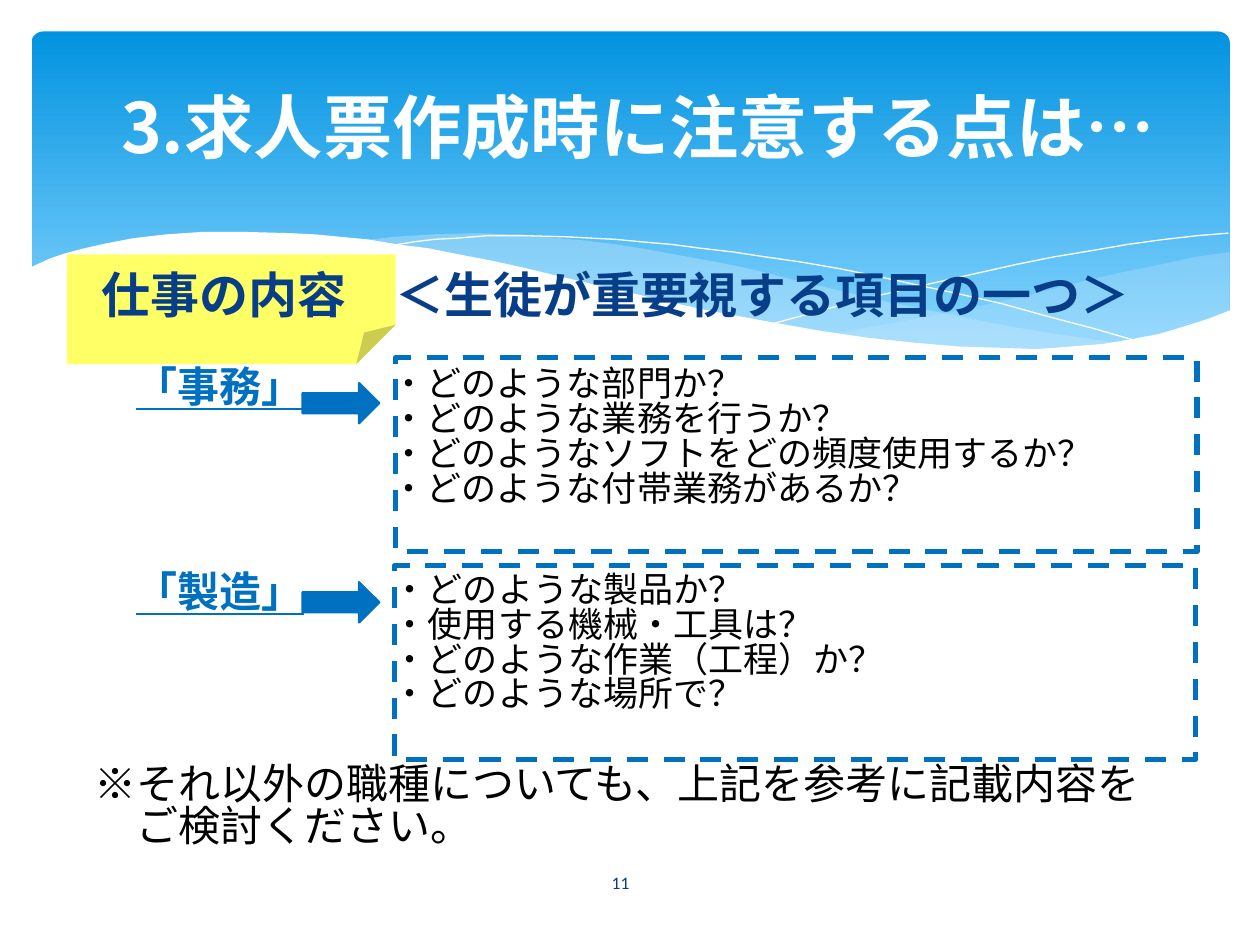
from dataclasses import dataclass

from lxml import etree
from pptx import Presentation
from pptx.dml.color import RGBColor
from pptx.enum.dml import MSO_LINE
from pptx.enum.shapes import MSO_SHAPE
from pptx.enum.text import MSO_ANCHOR, PP_ALIGN
from pptx.oxml.ns import qn
from pptx.util import Inches, Pt


@dataclass(frozen=True)
class Theme:
    japanese: str = "Noto Sans CJK JP"
    latin: str = "Calibri"
    white: str = "FFFFFF"
    black: str = "000000"
    navy: str = "073E87"
    blue: str = "0070C0"
    yellow: str = "FFFF66"
    wave: str = "C6E7FC"
    banner_top: str = "0293E0"
    banner_bottom: str = "83D3FE"
    title: float = 39.6
    heading: float = 28
    label: float = 24
    body: float = 20
    number: float = 10
    line_spacing: float = 0.83


RIGHT_WAVE = [
    (9.76, 2), (9.48, 2.04), (9.21, 2.1), (8.91, 2.16), (8.61, 2.23), (8.05, 2.37),
    (7.53, 2.48), (7.06, 2.57), (6.61, 2.65), (6.91, 2.69), (7.19, 2.72), (7.45, 2.75),
    (7.69, 2.77), (8.03, 2.78), (8.35, 2.77), (8.63, 2.75), (8.89, 2.72), (9.13, 2.67),
    (9.35, 2.62), (9.49, 2.57), (9.63, 2.52), (9.76, 2.47)]
MIDDLE_WAVE = [
    (8.93, 2.73), (8.66, 2.69), (8.37, 2.65), (8.07, 2.6), (7.75, 2.54), (7.41, 2.47),
    (7.06, 2.4), (6.68, 2.31), (6.29, 2.22), (5.98, 2.14), (5.69, 2.08), (5.41, 2.03),
    (5.14, 1.98), (4.89, 1.94), (4.65, 1.91), (4.42, 1.89), (4.2, 1.87), (3.8, 1.85),
    (3.44, 1.86), (3.13, 1.88), (2.86, 1.91), (3.23, 1.96), (3.62, 2.03), (4.04, 2.11),
    (4.49, 2.22), (4.91, 2.32), (5.3, 2.4), (5.66, 2.48), (6.01, 2.55), (6.34, 2.61),
    (6.65, 2.66), (6.95, 2.7), (7.22, 2.74), (7.48, 2.76), (7.73, 2.77), (8.07, 2.78),
    (8.38, 2.78), (8.67, 2.76)]
LONG_CURVE = [
    (3.09, 1.95), (3.28, 1.92), (3.44, 1.9), (3.63, 1.89), (3.87, 1.87), (4.16, 1.87),
    (4.5, 1.88), (4.89, 1.9), (5.1, 1.92), (5.33, 1.94), (5.56, 1.97), (5.82, 2),
    (6.08, 2.04), (6.36, 2.08), (6.65, 2.13), (6.95, 2.19), (7.27, 2.26), (7.6, 2.33),
    (7.95, 2.41), (8.31, 2.51), (8.69, 2.61), (9.07, 2.72)]
SHORT_CURVE = [
    (6.13, 2.57), (6.53, 2.46), (6.95, 2.35), (7.48, 2.23), (8.06, 2.1), (8.36, 2.04),
    (8.66, 1.99), (8.95, 1.94), (9.24, 1.9), (9.51, 1.87), (9.75, 1.85)]
WHITE_WAVE = [
    (9.77, 2.46), (9.59, 2.53), (9.4, 2.59), (9.2, 2.65), (8.99, 2.69), (8.75, 2.73),
    (8.5, 2.75), (8.23, 2.77), (7.93, 2.76), (7.61, 2.75), (7.26, 2.72), (6.88, 2.68),
    (6.48, 2.62), (6.03, 2.54), (5.55, 2.45), (5.03, 2.33), (4.47, 2.2), (4.18, 2.13),
    (3.91, 2.07), (3.65, 2.02), (3.4, 1.97), (3.16, 1.94), (2.92, 1.9), (2.71, 1.88),
    (2.5, 1.86), (2.3, 1.85), (1.93, 1.84), (1.61, 1.84), (1.32, 1.86), (1.06, 1.89),
    (0.85, 1.93), (0.67, 1.97), (0.52, 2.01), (0.4, 2.05), (0.29, 2.1), (0.23, 2.13),
    (0.23, 3.29), (9.77, 3.29)]


class SlideBuilder:
    def __init__(self, slide, theme):
        self.slide = slide
        self.theme = theme

    def paint(self, shape, fill=None, line=None, width=0.0, opacity=100):
        shape.shadow.inherit = False
        if fill:
            shape.fill.solid()
            shape.fill.fore_color.rgb = RGBColor.from_string(fill)
            if opacity < 100:
                color = next(shape.element.iter(qn("a:srgbClr")))
                etree.SubElement(color, qn("a:alpha"), val=str(opacity * 1000))
        else:
            shape.fill.background()
        if line:
            shape.line.color.rgb = RGBColor.from_string(line)
            shape.line.width = Pt(width)
        else:
            shape.line.fill.background()

    def preset(self, kind, box, adjustment=None, **style):
        shape = self.slide.shapes.add_shape(kind, *map(Inches, box))
        if adjustment is not None:
            guides = next(shape.element.iter(qn("a:avLst")))
            for guide in list(guides):
                guides.remove(guide)
            etree.SubElement(guides, qn("a:gd"), name="adj",
                             fmla=f"val {round(adjustment * 100000)}")
        self.paint(shape, **style)
        return shape

    def outline(self, points, closed=True, **style):
        points = [(Inches(x), Inches(y)) for x, y in points]
        builder = self.slide.shapes.build_freeform(*points[0])
        builder.add_line_segments(points[1:], close=closed)
        self.paint(builder.convert_to_shape(), **style)

    def banner(self, box):
        shape = self.preset(MSO_SHAPE.ROUNDED_RECTANGLE, box, 0.034)
        shape.fill.gradient()
        shape.fill.gradient_angle = 270
        stops = ((0, self.theme.banner_top), (0.9, self.theme.banner_bottom))
        for stop, (position, color) in zip(shape.fill.gradient_stops, stops):
            stop.position = position
            stop.color.rgb = RGBColor.from_string(color)

    def text(self, box, lines, size, color, bold=False, underline=False,
             centered=False, font=None):
        frame = self.slide.shapes.add_textbox(*map(Inches, box)).text_frame
        frame.word_wrap = True
        frame.vertical_anchor = MSO_ANCHOR.MIDDLE if centered else MSO_ANCHOR.TOP
        frame.text = "\n".join(lines)
        name = font or self.theme.japanese
        for paragraph in frame.paragraphs:
            paragraph.alignment = PP_ALIGN.CENTER if centered else PP_ALIGN.LEFT
            paragraph.line_spacing = self.theme.line_spacing
            paragraph.font.size = Pt(size)
            paragraph.font.bold = bold
            paragraph.font.underline = underline
            paragraph.font.color.rgb = RGBColor.from_string(color)
            paragraph.font.name = name
            latin = next(paragraph._p.iter(qn("a:latin")))
            latin.addnext(latin.makeelement(qn("a:ea"), {"typeface": name}))

    def job(self, label, questions, text_box, frame_box, arrow_top):
        """Draw a job label, its arrow and its framed list of questions."""
        theme = self.theme
        self.text(text_box, questions, theme.body, theme.black)
        self.text((0.98, text_box[1], 8.7, 0.5), [label], theme.label, theme.blue,
                  bold=True, underline=True)
        self.preset(MSO_SHAPE.RIGHT_ARROW, (2.4, arrow_top, 0.61, 0.32),
                    fill=theme.blue, line=theme.blue, width=1.25)
        frame = self.preset(MSO_SHAPE.RECTANGLE, frame_box, line=theme.blue, width=3)
        frame.line.dash_style = MSO_LINE.DASH


def main():
    presentation = Presentation()
    presentation.slide_width, presentation.slide_height = Inches(10), Inches(7.5)
    theme = Theme()
    builder = SlideBuilder(
        presentation.slides.add_slide(presentation.slide_layouts[6]), theme)

    builder.banner((0.25, 0.25, 9.51, 2.7))
    builder.outline(RIGHT_WAVE, fill=theme.wave, opacity=29)
    builder.outline(MIDDLE_WAVE, fill=theme.wave, opacity=40)
    for curve in (LONG_CURVE, SHORT_CURVE):
        builder.outline(curve, closed=False, line=theme.white)
    builder.outline(WHITE_WAVE, fill=theme.white)

    builder.text((0.5, 0.37, 9, 1.37), [" 3.求人票作成時に注意する点は…"],
                 theme.title, theme.white, bold=True, centered=True)
    builder.preset(MSO_SHAPE.FOLDED_CORNER, (0.53, 2.02, 2.61, 0.87), 0.359,
                   fill=theme.yellow)
    builder.text((0.71, 2.13, 8.58, 0.57), ["仕事の内容　＜生徒が重要視する項目の一つ＞"],
                 theme.heading, theme.navy, bold=True)
    builder.job("「事務」",
                ["・どのような部門か？", "・どのような業務を行うか？",
                 "・どのようなソフトをどの頻度使用するか？", "・どのような付帯業務があるか？"],
                (3.01, 2.88, 6.48, 1.45), (3.14, 2.84, 6.36, 1.54), 3.04)
    builder.job("「製造」",
                ["・どのような製品か？", "・使用する機械・工具は？",
                 "・どのような作業（工程）か？", "・どのような場所で？"],
                (3.02, 4.51, 6.2, 1.45), (3.13, 4.49, 6.36, 1.54), 4.62)
    builder.text((0.65, 6.03, 8.7, 0.91),
                 ["※それ以外の職種についても、上記を参考に記載内容を", "　ご検討ください。"],
                 theme.label, theme.black)
    builder.text((4.29, 6.82, 1.27, 0.4), ["11"], theme.number, theme.navy,
                 centered=True, font=theme.latin)
    presentation.save("out.pptx")


if __name__ == "__main__":
    main()
